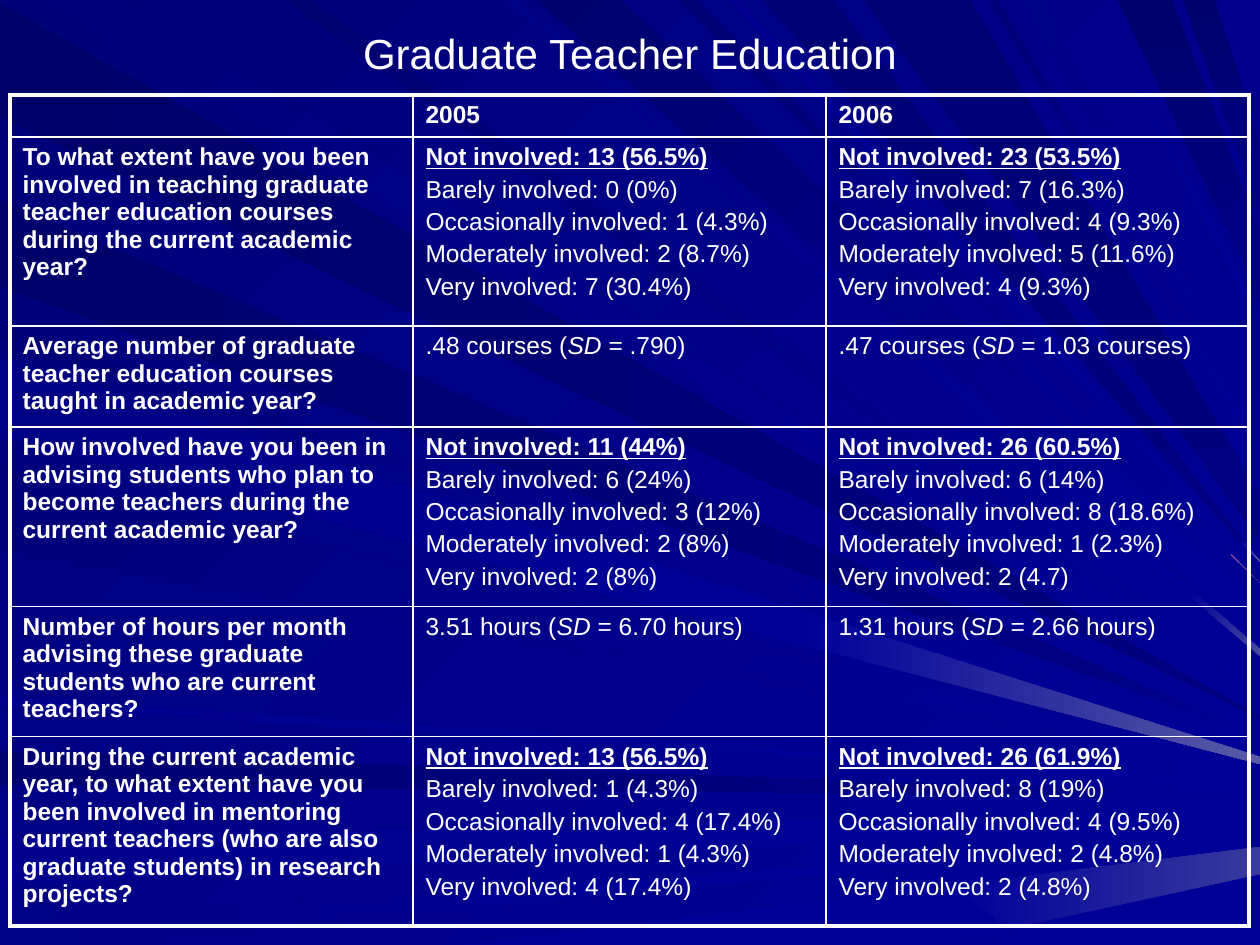
from lxml import etree
from pptx import Presentation
from pptx.dml.color import RGBColor
from pptx.enum.text import MSO_ANCHOR, PP_ALIGN
from pptx.oxml.ns import qn
from pptx.util import Pt

MIDDLE = MSO_ANCHOR.MIDDLE
CENTER = PP_ALIGN.CENTER
PX = 914400 / 126
FONT = "Arial"
COLORS = {"text": "FFFFFF", "border": "FFFFFF", "sky_start": "000078", "sky_end": "000099"}

# Each ray: outline points, start colour, end colour (None when plain), angle
RAYS = [
    ("701,399 0,3 0,117 667,435 1260,718 1260,717", "000069", "000080", 0),
    ("727,375 127,0 33,0 709,391 1260,709 1260,708", "00007B", "000099", 45),
    ("0,785 883,793 883,782 0,751", "000071", "000080", 0),
    ("1260,796 1260,795 883,782 883,793", "000080", "000099", 0),
    ("0,887 1047,832 1047,815 0,838", "00008C", "000099", 0),
    ("1260,820 1260,810 1047,815 1047,832", "000099", None, 0),
    ("1260,834 791,868 791,878", "000099", None, 0),
    ("0,945 68,945 791,878 791,868 0,926", "000085", "000099", 0),
    ("935,945 1009,929 953,885 459,945", "000099", None, 0),
    ("1260,874 1260,847 953,885 1008,929", "000099", "39399E", 0),
    ("1260,742 1100,689 1100,690", "000099", None, 0),
    ("0,340 1100,690 1100,689 0,325", "000076", "000099", 45),
    ("1260,737 1260,736 1100,667 1100,679", "000080", "000099", 0),
    ("0,287 1100,679 1100,667 0,200", "00006B", "000080", 0),
    ("501,0 1189,596 1193,591 524,0", "000083", "000099", 45),
    ("1260,656 1260,649 1193,591 1189,596", "000099", "4A4AA1", 45),
    ("1260,639 1260,604 1220,566 1198,586", "000099", None, 0),
    ("537,0 1198,586 1220,566 620,0", "00006D", "000099", 45),
    ("1260,583 1231,554 1231,555", "FF9999", None, 0),
    ("680,0 1231,555 1231,554 696,0", "000073", "000099", 45),
    ("764,0 1241,543 1244,542 833,0", "000073", "000080", 90),
    ("1260,562 1260,561 1244,542 1241,543", "000099", "5A5AA6", 45),
    ("1260,299 1260,231 1242,186 1226,228", "000080", None, 0),
    ("1118,0 1226,228 1242,186 1172,0", "00006B", "000080", 90),
    ("1215,0 1183,0 1246,174 1259,142", "00006D", "000080", 90),
    ("1246,174 1260,210 1260,144 1259,142", "000080", None, 0),
    ("0,431 1259,759 1259,751 0,350", "00007E", "000099", 45),
    ("0,551 1259,764 1259,762 0,471", "00007B", "000099", 45),
    ("0,706 1259,785 1259,782 0,696", "00008E", "000099", 0),
    ("284,0 1259,696 1259,689 311,0", "000070", "000099", 45),
    ("727,0 1259,572 1259,571 741,0", "00008E", "000099", 45),
    ("970,0 864,0 1259,539 1259,491 1257,491", "000073", "000080", 90),
    ("989,0 1259,454 1259,446 998,0", "000078", "000099", 45),
    ("1027,0 1259,423 1259,422 1038,0", "000085", "000099", 45),
    ("1259,314 1099,0 1090,0 1259,325", "00008A", "000099", 45),
    ("0,357 0,437 798,644 800,627 803,611", "000085", "000099", 0),
    ("1260,757 803,611 800,627 798,644 1260,764", "000099", "5A5AA6", 0),
]

LEVELS = ["Not", "Barely", "Occasionally", "Moderately", "Very"]
YEARS = ["2005", "2006"]
COLUMN_WIDTHS = [403, 413, 423]
ROW_HEIGHTS = [41, 189, 101, 170, 122, 179]
# Each survey row: question, then one answer a year (a list holds one count per level)
SURVEY = [
    ("To what extent have you been involved in teaching graduate teacher education courses "
     "during the current academic year?",
     ["13 (56.5%)", "0 (0%)", "1 (4.3%)", "2 (8.7%)", "7 (30.4%)"],
     ["23 (53.5%)", "7 (16.3%)", "4 (9.3%)", "5 (11.6%)", "4 (9.3%)"]),
    ("Average number of graduate teacher education courses taught in academic year?",
     ".48 courses (SD = .790)", ".47 courses (SD = 1.03 courses)"),
    ("How involved have you been in advising students who plan to become teachers "
     "during the current academic year?",
     ["11 (44%)", "6 (24%)", "3 (12%)", "2 (8%)", "2 (8%)"],
     ["26 (60.5%)", "6 (14%)", "8 (18.6%)", "1 (2.3%)", "2 (4.7)"]),
    ("Number of hours per month advising these graduate students who are current teachers?",
     "3.51 hours (SD = 6.70 hours)", "1.31 hours (SD = 2.66 hours)"),
    ("During the current academic year, to what extent have you been involved in mentoring "
     "current teachers (who are also graduate students) in research projects?",
     ["13 (56.5%)", "1 (4.3%)", "4 (17.4%)", "1 (4.3%)", "4 (17.4%)"],
     ["26 (61.9%)", "8 (19%)", "4 (9.5%)", "2 (4.8%)", "2 (4.8%)"]),
]


def px(length):
    """Turn px into EMU."""
    return round(length * PX)


def paint(fill, start, end, angle):
    """Fill plainly, or with a gradient whose angle runs clockwise."""
    if end is None:
        fill.solid()
        fill.fore_color.rgb = RGBColor.from_string(start)
        return
    fill.gradient()
    fill.gradient_angle = (360 - angle) % 360
    for stop, color in zip(fill.gradient_stops, (start, end)):
        stop.color.rgb = RGBColor.from_string(color)


def style(paragraph, size, bold=False, underline=None):
    """Set the font of a whole paragraph."""
    font = paragraph.font
    font.name, font.size, font.bold, font.underline = FONT, Pt(size), bold, underline
    font.color.rgb = RGBColor.from_string(COLORS["text"])


def add_backdrop(slide, left, top):
    """Paint the background and its fan of rays."""
    paint(slide.background.fill, COLORS["sky_start"], COLORS["sky_end"], 45)
    for outline, start, end, angle in RAYS:
        points = [tuple(map(int, pair.split(","))) for pair in outline.split()]
        builder = slide.shapes.build_freeform(*points[0], scale=PX)
        builder.add_line_segments(points[1:], close=True)
        ray = builder.convert_to_shape(px(left), px(top))
        ray.shadow.inherit = False
        ray.line.fill.background()
        paint(ray.fill, start, end, angle)


def add_title(slide, left, top, width, height):
    """Place the centred heading."""
    frame = slide.shapes.add_textbox(px(left), px(top), px(width), px(height)).text_frame
    frame.word_wrap = True
    frame.vertical_anchor = MIDDLE
    heading = frame.paragraphs[0]
    heading.text = "Graduate Teacher Education"
    heading.alignment = CENTER
    style(heading, 24)


def set_borders(cell, widths):
    """Draw the left, right, top and bottom cell borders."""
    properties = cell._tc.get_or_add_tcPr()
    for position, (side, width) in enumerate(zip("LRTB", widths)):
        line = etree.Element(qn(f"a:ln{side}"), w=str(Pt(width)))
        solid = etree.SubElement(line, qn("a:solidFill"))
        etree.SubElement(solid, qn("a:srgbClr"), val=COLORS["border"])
        properties.insert(position, line)


def write_cell(cell, answer, bold):
    """Write a sentence, or one line per involvement level with the first stressed."""
    by_level = isinstance(answer, list)
    lines = [f"{level} involved: {count}" for level, count in zip(LEVELS, answer)] if by_level else [answer]
    for index, line in enumerate(lines):
        paragraph = cell.text_frame.paragraphs[0] if index == 0 else cell.text_frame.add_paragraph()
        stressed = by_level and index == 0
        style(paragraph, 14, bold or stressed, stressed or None)
        if index:
            paragraph.space_before = Pt(2.8)
        before, statistic, after = line.partition("SD")
        for text in filter(None, (before, statistic, after)):
            run = paragraph.add_run()
            run.text = text
            if text == "SD":
                run.font.italic = True
        if not line:
            etree.SubElement(paragraph._p, qn("a:endParaRPr"), sz="1400")


def add_survey_table(slide, left, top):
    """Place the survey answers by question and year."""
    rows = [("", *YEARS), *SURVEY]
    table = slide.shapes.add_table(
        len(rows), len(COLUMN_WIDTHS), px(left), px(top),
        px(sum(COLUMN_WIDTHS)), px(sum(ROW_HEIGHTS))).table
    table.first_row = table.horz_banding = False
    for column, width in zip(table.columns, COLUMN_WIDTHS):
        column.width = px(width)
    for r, (answers, height) in enumerate(zip(rows, ROW_HEIGHTS)):
        table.rows[r].height = px(height)
        for c, answer in enumerate(answers):
            cell = table.cell(r, c)
            cell.fill.background()
            outer = (c == 0, c == len(answers) - 1, r == 0, r == len(rows) - 1)
            set_borders(cell, [2.25 if edge else 1 for edge in outer])
            write_cell(cell, answer, bold=r == 0 or c == 0)


def main():
    """Build and save the slide."""
    deck = Presentation()
    deck.slide_width, deck.slide_height = px(1260), px(945)
    slide = deck.slides.add_slide(deck.slide_layouts[6])
    add_backdrop(slide, 0, 0)
    add_title(slide, 63, 0, 1134, 105)
    add_survey_table(slide, 10, 95)
    deck.save("out.pptx")


if __name__ == "__main__":
    main()
